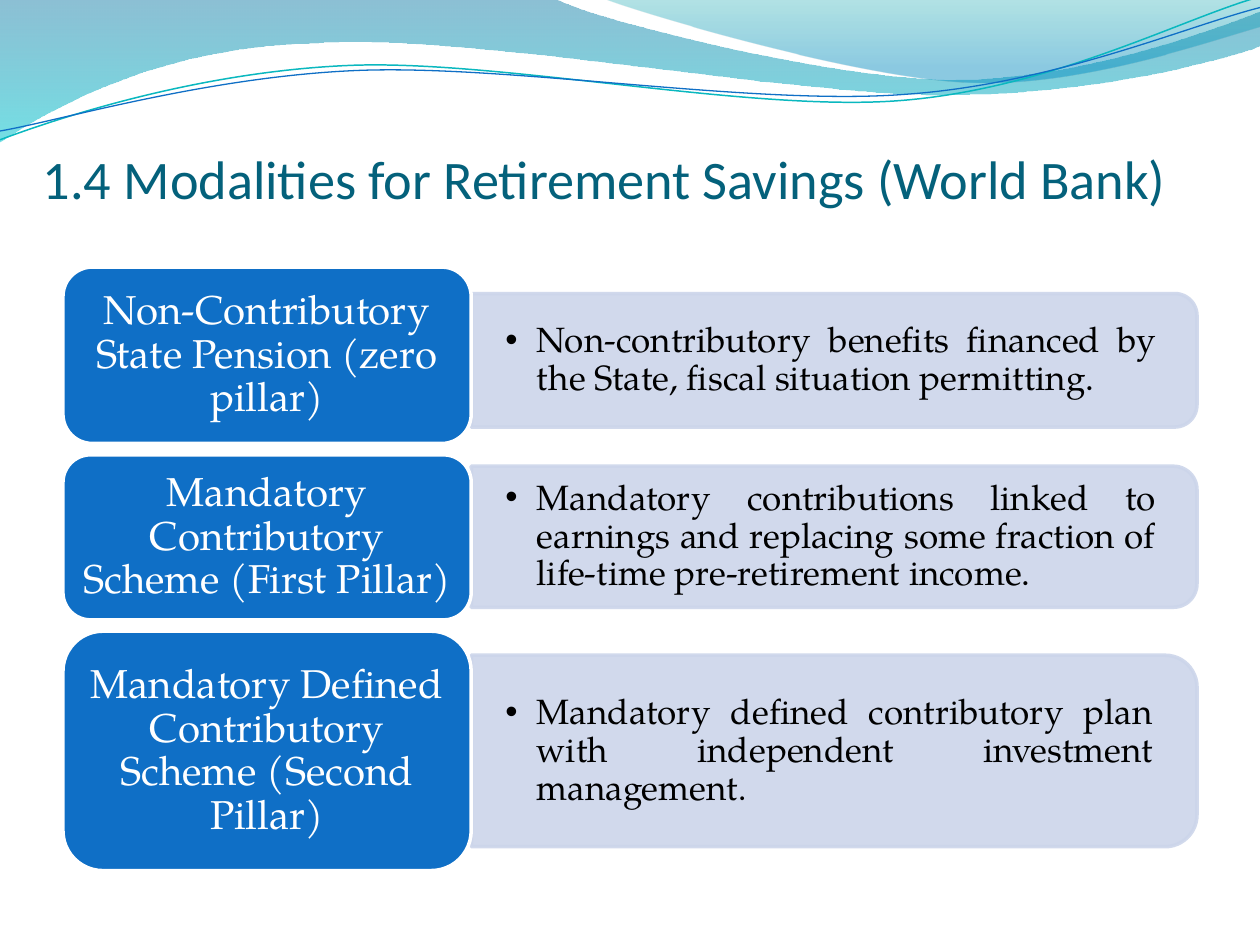
from dataclasses import dataclass
from typing import Any, NamedTuple

from lxml import etree
from pptx import Presentation
from pptx.dml.color import RGBColor
from pptx.enum.shapes import MSO_SHAPE
from pptx.enum.text import MSO_ANCHOR, MSO_AUTO_SIZE, PP_ALIGN
from pptx.oxml.ns import qn
from pptx.util import Inches, Pt

PILLAR_SHAPE = MSO_SHAPE.ROUNDED_RECTANGLE
PANEL_SHAPE = MSO_SHAPE.ROUND_2_SAME_RECTANGLE
MIDDLE, BOTTOM = MSO_ANCHOR.MIDDLE, MSO_ANCHOR.BOTTOM
NO_AUTOFIT = MSO_AUTO_SIZE.NONE
LEFT, CENTER, JUSTIFY = PP_ALIGN.LEFT, PP_ALIGN.CENTER, PP_ALIGN.JUSTIFY


@dataclass(frozen=True)
class Theme:
    heading_font: str = "Calibri"
    text_font: str = "TeX Gyre Pagella"
    title_size: float = 31
    pillar_size: float = 23
    detail_size: float = 20
    ending_size: float = 19
    title: str = "04617B"
    pillar: str = "0F6FC6"
    panel: str = "CCD5EA"
    white: str = "FFFFFF"
    black: str = "000000"
    teal_line: str = "0AB8BF"
    blue_line: str = "0F6FC6"


class Stop(NamedTuple):
    position: float
    color: str
    opacity: int


@dataclass(frozen=True)
class Wave:
    start: tuple[float, float]
    segments: list[tuple[float, ...]]
    stops: tuple[Stop, ...] = ()
    line_color: str = ""
    line_width: float = 0


@dataclass(frozen=True)
class Pillar:
    name: str
    detail: str
    top: float
    height: float
    panel_middle: float
    panel_height: float
    placeholder: int
    ending: str = ""


THEME = Theme()
PILLAR_LEFT, PILLAR_WIDTH, PANEL_WIDTH = 0.5, 3.24, 5.76
CORNER_INSET = 0.05

WAVES = [
    Wave((0, 0), [(4.4, -0.01), (4.76, 0.17, 6.64, 0.63, 7.58, 0.63),
                  (8.53, 0.63, 9.58, 0.26, 10, 0.09), (10.01, 0.36),
                  (9.83, 0.44, 8.7, 0.76, 7.46, 0.75),
                  (6.22, 0.75, 3.82, 0.28, 2.57, 0.34),
                  (1.29, 0.36, 0.46, 0.83, -0.01, 1.13)],
         stops=(Stop(0, "0074A1", 45), Stop(1, "00C6CF", 55))),
    Wave((4.79, -0.01), [(5.09, 0.11, 6.82, 0.62, 7.69, 0.65),
                         (8.56, 0.69, 9.61, 0.32, 10, 0.21), (10, 0)],
         stops=(Stop(0, "00A1A9", 30), Stop(0.8, "008BBF", 45))),
    Wave((0, 1.11), [(0.48, 0.93, 1.58, 0.57, 2.77, 0.52),
                     (3.95, 0.47, 5.93, 0.89, 7.13, 0.8),
                     (8.33, 0.71, 9.38, 0.15, 9.98, -0.02)],
         line_color=THEME.teal_line, line_width=0.85),
    Wave((0, 1.04), [(0.47, 0.96, 1.64, 0.61, 2.83, 0.56),
                     (4.03, 0.51, 5.97, 0.84, 7.17, 0.75),
                     (8.36, 0.67, 9.41, 0.21, 10, 0.06)],
         line_color=THEME.blue_line, line_width=0.75),
]

PILLARS = [
    Pillar("Non-Contributory State Pension (zero pillar)",
           "Non-contributory benefits financed by the State, fiscal situation permitting.",
           2.12, 1.4, 2.86, 1.06, 1),
    Pillar("Mandatory Contributory Scheme (First Pillar)",
           "Mandatory contributions linked to earnings and replacing some fraction of "
           "life-time pre-retirement income.",
           3.61, 1.31, 4.26, 1.12, 2),
    Pillar("Mandatory Defined Contributory Scheme (Second Pillar)",
           "Mandatory defined contributory plan with independent investment management",
           5.01, 1.9, 5.96, 1.52, 3, ending="."),
]


def set_values(target: Any, values: dict[str, Any]) -> None:
    for name, value in values.items():
        setattr(target, name, value)


def place(shape: Any, left: float, top: float, width: float, height: float) -> None:
    set_values(shape, {"left": Inches(left), "top": Inches(top),
                       "width": Inches(width), "height": Inches(height)})


def set_opacity(shape: Any, opacities: list[int]) -> None:
    colors = list(shape._element.spPr.iter(qn("a:srgbClr")))
    for color, opacity in zip(colors, opacities):
        etree.SubElement(color, qn("a:alpha")).set("val", str(opacity * 1000))


def paint(shape: Any, fill: str, line: str) -> None:
    shape.shadow.inherit = False
    shape.fill.solid()
    shape.fill.fore_color.rgb = RGBColor.from_string(fill)
    shape.line.color.rgb = RGBColor.from_string(line)
    shape.line.width = Pt(2)


def style_run(run: Any, font: str, size: float, color: str) -> None:
    set_values(run.font, {"name": font, "size": Pt(size), "bold": False})
    run.font.color.rgb = RGBColor.from_string(color)


def write(shape: Any, text: str, font: str, size: float, color: str, align: Any,
          anchor: Any, margins: tuple[float, float, float, float], spacing: float) -> Any:
    frame = shape.text_frame
    frame.text = text
    left, top, right, bottom = map(Inches, margins)
    set_values(frame, {"word_wrap": True, "auto_size": NO_AUTOFIT, "vertical_anchor": anchor,
                       "margin_left": left, "margin_top": top,
                       "margin_right": right, "margin_bottom": bottom})
    paragraph = frame.paragraphs[0]
    set_values(paragraph, {"alignment": align, "line_spacing": spacing,
                           "space_before": Pt(0), "space_after": Pt(0)})
    style_run(paragraph.runs[0], font, size, color)
    return paragraph


def bend(ribbon: Any, segments: list[tuple[float, ...]]) -> None:
    lines = list(ribbon._element.spPr.iter(qn("a:lnTo")))
    for line, segment in zip(lines, segments):
        if len(segment) == 2:
            continue
        curve = etree.Element(qn("a:cubicBezTo"))
        for x, y in zip(segment[::2], segment[1::2]):
            point = etree.SubElement(curve, qn("a:pt"))
            point.set("x", str(Inches(x) - ribbon.left))
            point.set("y", str(Inches(y) - ribbon.top))
        line.getparent().replace(line, curve)


def draw_wave(slide: Any, wave: Wave) -> None:
    builder = slide.shapes.build_freeform(*map(Inches, wave.start))
    corners = [(Inches(segment[-2]), Inches(segment[-1])) for segment in wave.segments]
    builder.add_line_segments(corners, close=bool(wave.stops))
    ribbon = builder.convert_to_shape()
    bend(ribbon, wave.segments)
    ribbon.shadow.inherit = False
    if wave.stops:
        ribbon.line.fill.background()
        ribbon.fill.gradient()
        ribbon.fill.gradient_angle = 270
        for target, stop in zip(ribbon.fill.gradient_stops, wave.stops):
            target.position = stop.position
            target.color.rgb = RGBColor.from_string(stop.color)
        set_opacity(ribbon, [stop.opacity for stop in wave.stops])
    else:
        ribbon.fill.background()
        ribbon.line.color.rgb = RGBColor.from_string(wave.line_color)
        ribbon.line.width = Pt(wave.line_width)


def draw_pillar(slide: Any, pillar: Pillar) -> None:
    panel_left = PILLAR_LEFT + PILLAR_WIDTH
    panel = slide.shapes.add_shape(
        PANEL_SHAPE, Inches(panel_left + (PANEL_WIDTH - pillar.panel_height) / 2),
        Inches(pillar.panel_middle - PANEL_WIDTH / 2),
        Inches(pillar.panel_height), Inches(PANEL_WIDTH))
    panel.rotation = 90
    paint(panel, THEME.panel, THEME.panel)
    set_opacity(panel, [90, 90])

    detail = slide.placeholders[pillar.placeholder]
    inset = CORNER_INSET * pillar.panel_height
    place(detail, panel_left, pillar.panel_middle - pillar.panel_height / 2 + inset,
          PANEL_WIDTH - inset, pillar.panel_height - 2 * inset)
    bullet = write(detail, pillar.detail, THEME.text_font, THEME.detail_size, THEME.black,
                   JUSTIFY, MIDDLE, (0.27, 0.14, 0.27, 0.14), 0.9)
    if pillar.ending:
        ending = bullet.add_run()
        ending.text = pillar.ending
        style_run(ending, THEME.text_font, THEME.ending_size, THEME.black)
    bullet.level = 1
    properties = bullet._p.get_or_add_pPr()
    properties.set("marL", str(Inches(0.25)))
    properties.set("indent", str(Inches(-0.25)))
    etree.SubElement(properties, qn("a:buChar")).set("char", "•")
    slide.shapes._spTree.append(detail._element)

    label = slide.shapes.add_shape(PILLAR_SHAPE, Inches(PILLAR_LEFT), Inches(pillar.top),
                                   Inches(PILLAR_WIDTH), Inches(pillar.height))
    paint(label, THEME.pillar, THEME.white)
    write(label, pillar.name, THEME.text_font, THEME.pillar_size, THEME.white,
          CENTER, MIDDLE, (0.09, 0.05, 0.09, 0.05), 0.9)


def main() -> None:
    deck = Presentation()
    set_values(deck, {"slide_width": Inches(10), "slide_height": Inches(7.5)})
    slide = deck.slides.add_slide(deck.slide_layouts[4])
    unused = slide.placeholders[4]._element
    unused.getparent().remove(unused)
    for wave in WAVES:
        draw_wave(slide, wave)
    title = slide.shapes.title
    place(title, 0.34, 0.61, 9.42, 1.06)
    write(title, "1.4 Modalities for Retirement Savings (World Bank)", THEME.heading_font,
          THEME.title_size, THEME.title, LEFT, BOTTOM, (0, 0.05, 0, 0), 1.0)
    for pillar in PILLARS:
        draw_pillar(slide, pillar)
    deck.save("out.pptx")


if __name__ == "__main__":
    main()
